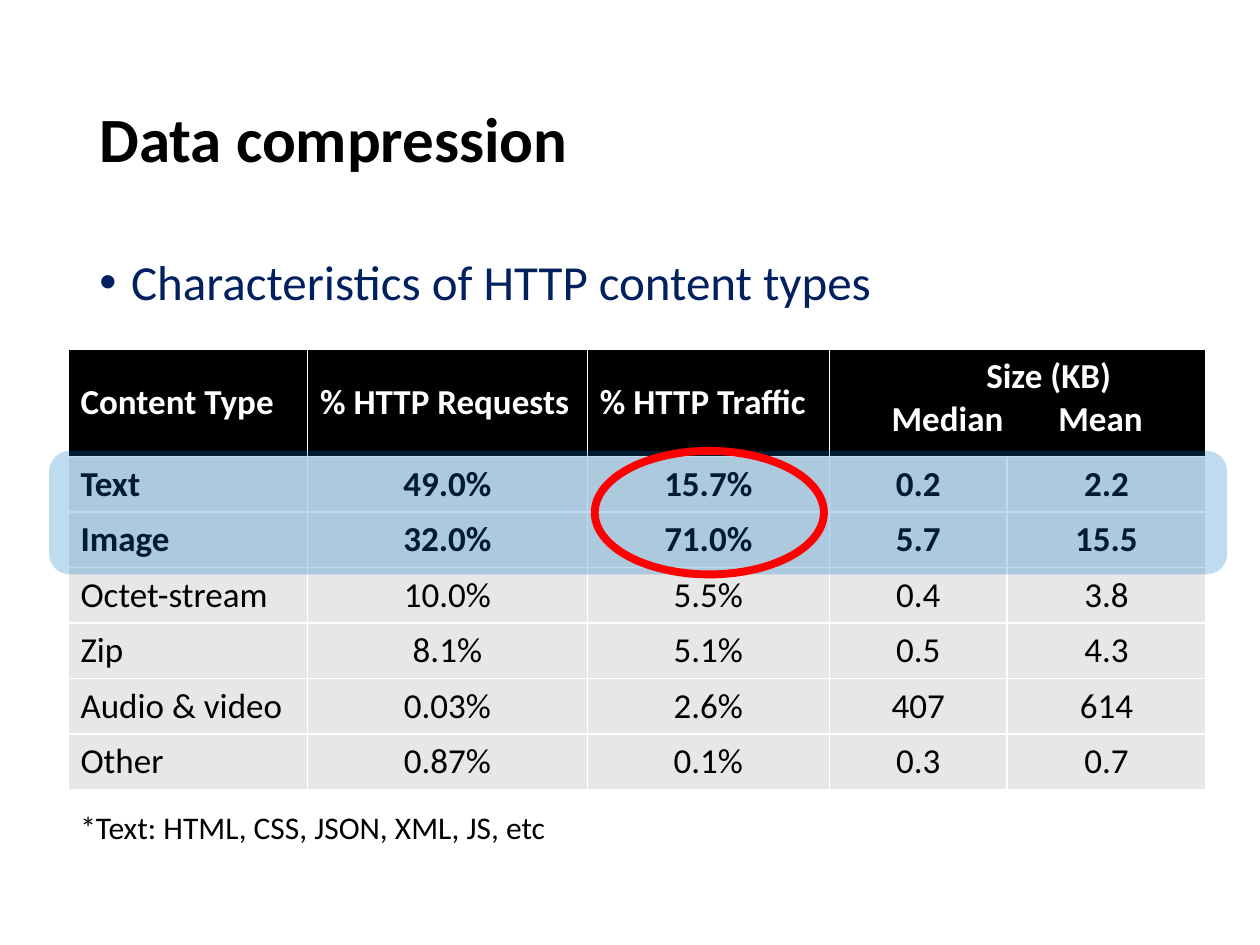
from lxml import etree
from pptx import Presentation
from pptx.dml.color import RGBColor
from pptx.enum.shapes import MSO_SHAPE
from pptx.enum.text import MSO_ANCHOR, MSO_AUTO_SIZE, PP_ALIGN
from pptx.oxml.ns import qn
from pptx.util import Cm, Pt

LEFT, CENTER = PP_ALIGN.LEFT, PP_ALIGN.CENTER
TOP, MIDDLE = MSO_ANCHOR.TOP, MSO_ANCHOR.MIDDLE
ROUNDED, OVAL = MSO_SHAPE.ROUNDED_RECTANGLE, MSO_SHAPE.OVAL

COLORS = {
    "black": "000000",
    "white": "FFFFFF",
    "navy": "002060",
    "row": "E7E7E7",
    "highlight": "0070C0",
    "ring": "FF0000",
}
FONT = "Calibri"

TITLE = "Data compression"
TOPIC = "Characteristics of HTTP content types"
FOOTNOTE = "*Text: HTML, CSS, JSON, XML, JS, etc"
HEADERS = ["Content Type", "% HTTP Requests", "% HTTP Traffic"]
# Each line of the merged size header, with its tab stops in cm
SIZE_HEADER = [("\tSize (KB)", [2.91]), ("\tMedian\tMean", [1, 4.36])]
CONTENT_TYPES = [
    ("Text", "49.0%", "15.7%", "0.2", "2.2"),
    ("Image", "32.0%", "71.0%", "5.7", "15.5"),
    ("Octet-stream", "10.0%", "5.5%", "0.4", "3.8"),
    ("Zip", "8.1%", "5.1%", "0.5", "4.3"),
    ("Audio & video", "0.03%", "2.6%", "407", "614"),
    ("Other", "0.87%", "0.1%", "0.3", "0.7"),
]
HIGHLIGHTED = ("Text", "Image")

MARGIN, CONTENT_WIDTH = 1.75, 21.9
TABLE_LEFT, TABLE_TOP = 1.37, 7.04
COLUMN_WIDTHS = [4.83, 5.64, 4.88, 3.58, 4.01]
HEADER_HEIGHT, ROW_HEIGHT = 2.16, 1.1
BAND_TOP, BAND_HEIGHT = 9.09, 2.49


def rgb(name):
    return RGBColor.from_string(COLORS[name])


def write(paragraph, text, size=20, color="black", bold=False, align=LEFT,
          line_spacing=None, space_before=0):
    run = paragraph.add_run()
    run.text = text
    run.font.name = FONT
    run.font.size = Pt(size)
    run.font.bold = bold
    run.font.color.rgb = rgb(color)
    paragraph.alignment = align
    paragraph.space_before = Pt(space_before)
    if line_spacing:
        paragraph.line_spacing = line_spacing


def set_tabs(paragraph, stops):
    tabs = etree.SubElement(paragraph._p.get_or_add_pPr(), qn("a:tabLst"))
    for stop in stops:
        etree.SubElement(tabs, qn("a:tab"), pos=str(Cm(stop)), algn="l")


def place(shape, left, top, width, height):
    shape.left, shape.top = Cm(left), Cm(top)
    shape.width, shape.height = Cm(width), Cm(height)


def fill_cell(cell, color, anchor=TOP):
    cell.fill.solid()
    cell.fill.fore_color.rgb = rgb(color)
    cell.vertical_anchor = anchor


def add_headings(slide):
    title = slide.shapes.title
    place(title, MARGIN, 1.02, CONTENT_WIDTH, 3.68)
    title.text_frame.vertical_anchor = MIDDLE
    write(title.text_frame.paragraphs[0], TITLE, size=36, bold=True, line_spacing=0.9)

    body = slide.placeholders[1]
    place(body, MARGIN, 5.08, CONTENT_WIDTH, 12.09)
    body.text_frame.auto_size = MSO_AUTO_SIZE.NONE
    topic = body.text_frame.paragraphs[0]
    write(topic, TOPIC, size=28, color="navy", line_spacing=0.9, space_before=10)
    bullet_format = topic._p.get_or_add_pPr()
    bullet_format.set("marL", str(Cm(0.64)))
    bullet_format.set("indent", str(-Cm(0.64)))
    etree.SubElement(bullet_format, qn("a:buChar"), char="•")


def add_content_table(slide):
    row_count = len(CONTENT_TYPES)
    table = slide.shapes.add_table(
        row_count + 1, len(COLUMN_WIDTHS), Cm(TABLE_LEFT), Cm(TABLE_TOP),
        Cm(sum(COLUMN_WIDTHS)), Cm(HEADER_HEIGHT + row_count * ROW_HEIGHT)).table
    for column, width in zip(table.columns, COLUMN_WIDTHS):
        column.width = Cm(width)
    for index, row in enumerate(table.rows):
        row.height = Cm(ROW_HEIGHT if index else HEADER_HEIGHT)

    for cell, header in zip(table.rows[0].cells, HEADERS):
        fill_cell(cell, "black", MIDDLE)
        write(cell.text_frame.paragraphs[0], header, color="white", bold=True)
    size_cell = table.cell(0, len(HEADERS))
    size_cell.merge(table.cell(0, len(COLUMN_WIDTHS) - 1))
    fill_cell(size_cell, "black")
    size_cell.text_frame.add_paragraph()
    for paragraph, (text, stops) in zip(size_cell.text_frame.paragraphs, SIZE_HEADER):
        write(paragraph, text, color="white", bold=True)
        set_tabs(paragraph, stops)

    for r, values in enumerate(CONTENT_TYPES, start=1):
        for c, value in enumerate(values):
            cell = table.cell(r, c)
            fill_cell(cell, "row")
            write(cell.text_frame.paragraphs[0], value,
                  bold=values[0] in HIGHLIGHTED, align=CENTER if c else LEFT)


def add_highlights(slide):
    band = slide.shapes.add_shape(
        ROUNDED, Cm(0.99), Cm(BAND_TOP), Cm(23.75), Cm(BAND_HEIGHT))
    band.shadow.inherit = False
    band.line.fill.background()
    band.fill.solid()
    band.fill.fore_color.rgb = rgb("highlight")
    band_color = band._element.spPr.find(qn("a:solidFill"))[0]
    etree.SubElement(band_color, qn("a:alpha"), val="25000")

    add_footnote(slide)

    ring = slide.shapes.add_shape(
        OVAL, Cm(11.99), Cm(BAND_TOP), Cm(4.62), Cm(BAND_HEIGHT))
    ring.shadow.inherit = False
    ring.fill.background()
    ring.line.color.rgb = rgb("ring")
    ring.line.width = Pt(4.5)


def add_footnote(slide):
    footnote = slide.shapes.add_textbox(Cm(TABLE_LEFT), Cm(16.18), Cm(10.62), Cm(0.99))
    footnote.text_frame.word_wrap = True
    footnote.text_frame.vertical_anchor = MIDDLE
    write(footnote.text_frame.paragraphs[0], FOOTNOTE, size=18)


def main():
    presentation = Presentation()
    presentation.slide_width, presentation.slide_height = Cm(25.4), Cm(19.05)
    slide = presentation.slides.add_slide(presentation.slide_layouts[1])
    add_headings(slide)
    add_content_table(slide)
    add_highlights(slide)
    presentation.save("out.pptx")


if __name__ == "__main__":
    main()
